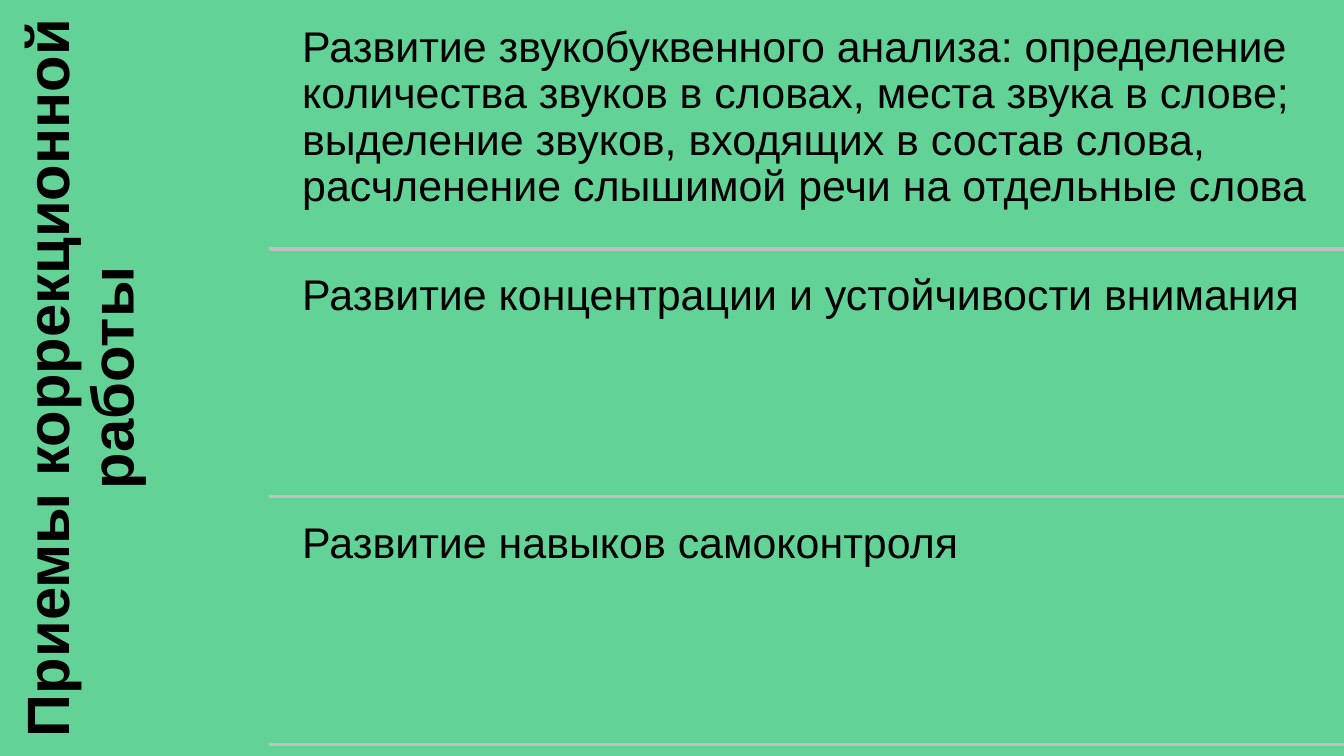
from dataclasses import dataclass

from lxml import etree
from pptx import Presentation
from pptx.dml.color import RGBColor
from pptx.enum import shapes, text
from pptx.oxml.ns import qn
from pptx.util import Inches, Pt

GREEN = RGBColor(0x63, 0xD2, 0x97)
GREY = RGBColor(0xBF, 0xBF, 0xC1)
BLACK = RGBColor(0, 0, 0)

WIDTH = 10
HEIGHT = WIDTH * 9 / 16
TITLE_WIDTH = 2
TEXT_LEFT = 2.15
ROW_HEIGHT, ROW_GAP = 1.76, 0.09
ROW_STEP = (HEIGHT - ROW_GAP) / 3


@dataclass
class TextStyle:
    size: int
    bold: bool
    inset: float
    align: text.PP_ALIGN


TITLE_STYLE = TextStyle(32, True, 0.13, text.PP_ALIGN.CENTER)
ROW_STYLE = TextStyle(23, False, 0.1, text.PP_ALIGN.LEFT)

TITLE = "Приемы коррекционной работы"
TECHNIQUES = [
    "Развитие звукобуквенного анализа: определение количества звуков в словах, "
    "места звука в слове; выделение звуков, входящих в состав слова, "
    "расчленение слышимой речи на отдельные слова",
    "Развитие концентрации и устойчивости внимания",
    "Развитие навыков самоконтроля",
]


def set_all(target, values: dict) -> None:
    for name, value in values.items():
        setattr(target, name, value)


def write_text(box, wording: str, style: TextStyle) -> None:
    frame = box.text_frame
    inset = Inches(style.inset)
    set_all(frame, {
        "word_wrap": True,
        "auto_size": text.MSO_AUTO_SIZE.NONE,
        "vertical_anchor": text.MSO_ANCHOR.TOP,
        "margin_left": inset, "margin_right": inset,
        "margin_top": inset, "margin_bottom": inset,
    })
    para = frame.paragraphs[0]
    set_all(para, {"alignment": style.align, "line_spacing": 0.9,
                   "space_before": Pt(0), "space_after": Pt(0.35 * style.size)})
    span = para.add_run()
    span.text = wording
    set_all(span.font, {"name": "Arial", "size": Pt(style.size), "bold": style.bold})
    span.font.color.rgb = BLACK


def add_title(page) -> None:
    title = page.shapes.title
    # A quarter turn about the centre swaps the width and height
    shift = (HEIGHT - TITLE_WIDTH) / 2
    set_all(title, {"left": Inches(-shift), "top": Inches(shift),
                    "width": Inches(HEIGHT), "height": Inches(TITLE_WIDTH),
                    "rotation": 270})
    write_text(title, TITLE, TITLE_STYLE)


def add_divider(page, y: float) -> None:
    divider = page.shapes.add_connector(
        shapes.MSO_CONNECTOR.STRAIGHT,
        Inches(TITLE_WIDTH), Inches(y), Inches(WIDTH), Inches(y))
    divider.line.color.rgb = GREY
    divider.line.width = Pt(2)
    etree.SubElement(divider._element.spPr, qn("a:effectLst"))


def add_technique(page, index: int, wording: str) -> None:
    top = ROW_GAP + index * ROW_STEP
    box = page.shapes.add_textbox(
        Inches(TEXT_LEFT), Inches(top),
        Inches(WIDTH - TEXT_LEFT), Inches(ROW_HEIGHT))
    write_text(box, wording, ROW_STYLE)
    add_divider(page, top + ROW_HEIGHT)


def main() -> None:
    deck = Presentation()
    deck.slide_width, deck.slide_height = Inches(WIDTH), Inches(HEIGHT)
    page = deck.slides.add_slide(deck.slide_layouts.get_by_name("Title Only"))
    page.background.fill.solid()
    page.background.fill.fore_color.rgb = GREEN

    # Title, reading upwards along the left edge
    add_title(page)

    # Techniques, each closed by a divider
    for index, wording in enumerate(TECHNIQUES):
        add_technique(page, index, wording)

    deck.save("out.pptx")


if __name__ == "__main__":
    main()
